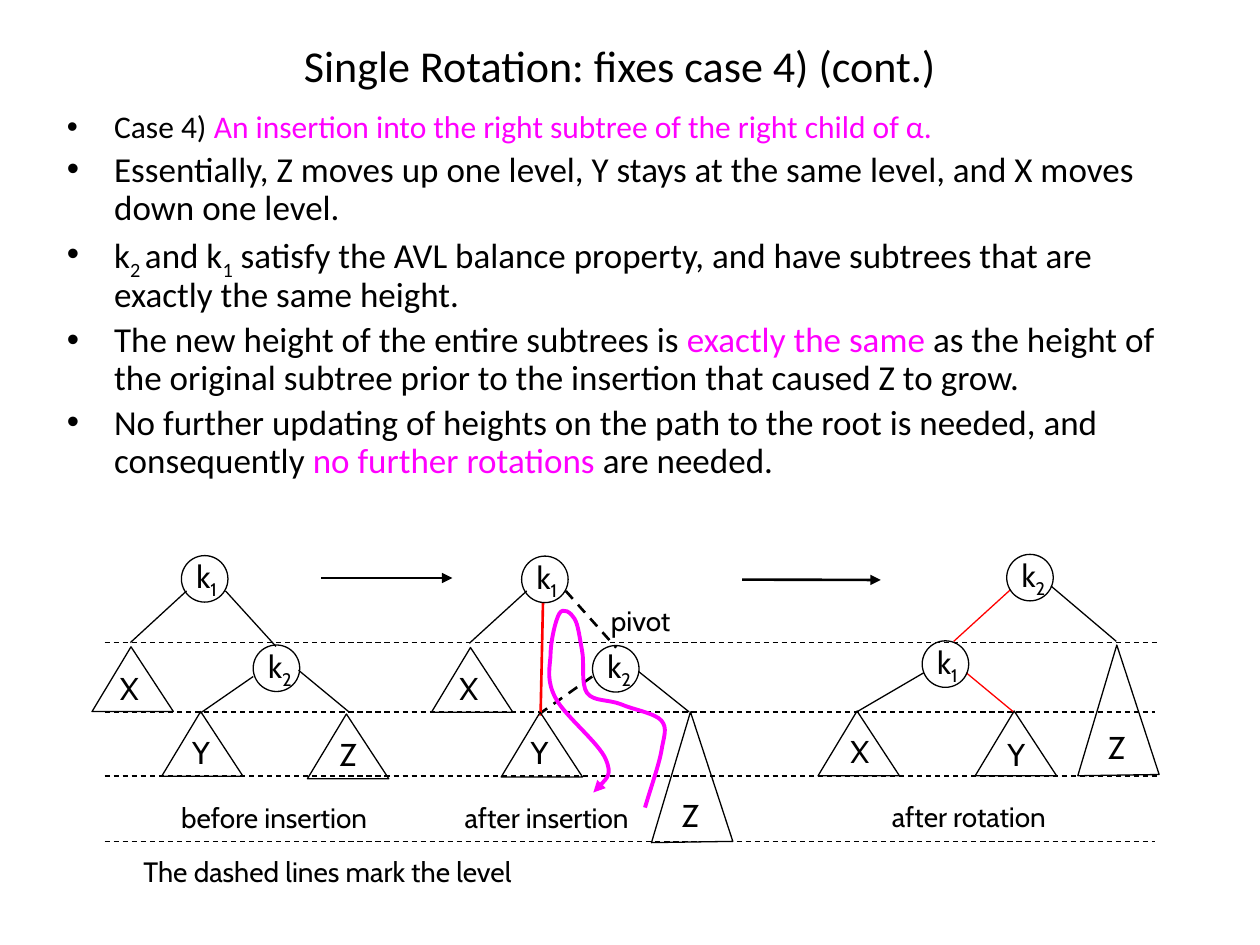
"""Builds a slide on the single rotation that fixes case 4 in an AVL tree."""
from dataclasses import dataclass

from lxml import etree
from pptx import Presentation
from pptx.dml.color import RGBColor
from pptx.enum import dml, shapes, text
from pptx.oxml.ns import qn
from pptx.util import Pt


@dataclass(frozen=True)
class Theme:
    ink: str = "000000"
    accent: str = "FF00FF"
    moved: str = "FF0000"
    body_font: str = "Calibri"
    label_font: str = "Cabin"
    title: float = 25.2
    lead: float = 18
    body: float = 20
    label: float = 18
    caption: float = 16
    thin: float = 0.75
    medium: float = 1.5
    thick: float = 2.25


T = Theme()


@dataclass(frozen=True)
class Run:
    text: str
    color: str = T.ink
    sub: bool = False


@dataclass(frozen=True)
class Node:
    index: str
    x: float
    y: float


@dataclass(frozen=True)
class Subtree:
    name: str
    x: float
    y: float
    label_dx: float = -12
    label_dy: float = 8.5
    tall: bool = False


@dataclass(frozen=True)
class Edge:
    x1: float
    y1: float
    x2: float
    y2: float
    color: str = T.ink
    width: float = T.thin
    dashed: bool = False
    arrow: bool = False


@dataclass(frozen=True)
class Caption:
    text: str
    x: float
    y: float
    w: float


LEVELS = [(367.2, 662.4), (406.8, 660.2), (443.5, 662.4), (481, 660.2)]
NODE_SIZE = 26.6

BULLETS = [
    [Run("Case 4) "),
     Run("An insertion into the right subtree of the right child of α.", T.accent)],
    [Run("Essentially, Z moves up one level, Y stays at the same level, "
         "and X moves down one level.")],
    [Run("k"), Run("2 ", sub=True), Run("and k"), Run("1", sub=True),
     Run(" satisfy the AVL balance property, and have subtrees that are "
         "exactly the same height.")],
    [Run("The new height of the entire subtrees is "), Run("exactly the same", T.accent),
     Run(" as the height of the original subtree prior to the insertion that "
         "caused Z to grow.")],
    [Run("No further updating of heights on the path to the root is needed, "
         "and consequently "), Run("no further rotations", T.accent), Run(" are needed.")],
]
NODES = [
    Node("1", 103.7, 317.5), Node("2", 144.7, 368.6),
    Node("1", 298.1, 317.8), Node("2", 338.6, 368.9),
    Node("2", 575.3, 316.8), Node("1", 527, 366.2),
]
SUBTREES = [
    Subtree("X", 74.9, 369.6, -13.5, 9), Subtree("Y", 114.7, 406.6), Subtree("Z", 198, 408, -11),
    Subtree("X", 268.9, 370, -13.5), Subtree("Y", 308.7, 407, -12.5),
    Subtree("Z", 394.6, 406.8, -12, 44.6, True),
    Subtree("X", 489.8, 406.3, -11), Subtree("Y", 579.6, 406.3, -11, 10),
    Subtree("Z", 638.2, 368.6, -12, 44, True),
]
EDGES = [
    Edge(106.6, 337.7, 74.5, 367.2), Edge(128.9, 337.7, 157.7, 369.4),
    Edge(144.7, 386.6, 114.5, 407.5), Edge(170.6, 383, 199.4, 406.8),
    Edge(301, 337.7, 268.2, 367.6),
    Edge(323.3, 337.7, 352.1, 370.1, width=T.medium, dashed=True),
    Edge(338.4, 386.6, 308.9, 407.5, width=T.medium, dashed=True),
    Edge(365, 383.8, 393.8, 406.8),
    Edge(527.8, 384.5, 488.9, 407.2), Edge(600.5, 334.8, 637.9, 366.5),
    Edge(552.2, 384.5, 579.6, 407.2, T.moved), Edge(577.4, 337, 545, 366.5, T.moved),
    Edge(310.3, 344.2, 308.9, 409, T.moved, T.medium),
    Edge(183.6, 330.3, 258.5, 330.3, width=T.medium, arrow=True),
    Edge(424.1, 331.2, 503.3, 331.4, width=T.medium, arrow=True),
]
CAPTIONS = [
    Caption("The dashed lines mark the level", 74.9, 484.8, 238.3),
    Caption("before insertion", 96.5, 454, 125.3),
    Caption("after insertion", 258.5, 454, 113),
    Caption("after rotation", 502.6, 453.4, 107.3),
    Caption("pivot", 342, 341.6, 49),
]
PIVOT_CURVE = [
    (368.6, 461.5),
    (372.2, 449.3), (376.6, 437), (378, 429.1),
    (379.4, 420.5), (381.6, 416.2), (378, 411.8),
    (374.4, 407.5), (361.4, 405.4), (355, 402.5),
    (347.8, 399.6), (339.1, 401), (335.5, 396),
    (331.9, 391), (334.1, 378.7), (332.6, 371.5),
    (331.2, 364.3), (330.5, 357.1), (328.3, 353.5),
    (326.2, 349.9), (321.8, 347), (319.7, 350.6),
    (317.5, 354.2), (314.6, 366.5), (314.6, 375.1),
    (313.9, 383), (312.5, 389.5), (317.5, 398.9),
    (322.6, 409), (342.7, 424.8), (346.3, 434.2),
    (349.9, 442.8), (344.2, 447.8), (339.1, 452.9),
]


def write(p, txt: str, *, size: float, font: str, color: str = T.ink, sub: bool = False) -> None:
    """Append a formatted run to a paragraph."""
    r = p.add_run()
    r.text = txt
    r.font.size, r.font.name = Pt(size), font
    r.font.color.rgb = RGBColor.from_string(color)
    if sub:
        r.font._element.set("baseline", "-25000")


def place(sp, x: float, y: float, w: float, h: float) -> None:
    """Move and size a shape."""
    sp.left, sp.top, sp.width, sp.height = Pt(x), Pt(y), Pt(w), Pt(h)


def stroke(sp, color: str = T.ink, width: float = T.thin, arrow: bool = False) -> None:
    """Set the line of a shape and its optional arrowhead."""
    sp.line.color.rgb = RGBColor.from_string(color)
    sp.line.width = Pt(width)
    if arrow:
        ln = sp.element.spPr.find(qn("a:ln"))
        etree.SubElement(ln, qn("a:tailEnd"), type="triangle")


def draw_edge(sl, e: Edge) -> None:
    """Draw a straight edge."""
    sp = sl.shapes.add_connector(
        shapes.MSO_CONNECTOR.STRAIGHT, Pt(e.x1), Pt(e.y1), Pt(e.x2), Pt(e.y2))
    sp.line.width = Pt(e.width)
    if e.dashed:
        sp.line.dash_style = dml.MSO_LINE.DASH
    stroke(sp, e.color, e.width, e.arrow)
    etree.SubElement(sp.element.spPr, qn("a:effectLst"))


def draw_label(sl, runs: list[Run], x: float, y: float, w: float, size: float) -> None:
    """Draw an unwrapped text box."""
    tf = sl.shapes.add_textbox(Pt(x), Pt(y), Pt(w), Pt(size + 10.6)).text_frame
    tf.word_wrap = False
    tf.auto_size = text.MSO_AUTO_SIZE.SHAPE_TO_FIT_TEXT
    for run in runs:
        write(tf.paragraphs[0], run.text, size=size, font=T.label_font, color=run.color, sub=run.sub)


def draw_outline(sl, points: list[tuple[float, float]], close: bool):
    """Draw an unfilled outline through the points."""
    start, *rest = [(Pt(x), Pt(y)) for x, y in points]
    fb = sl.shapes.build_freeform(*start)
    fb.add_line_segments(rest, close=close)
    sp = fb.convert_to_shape()
    sp.fill.background()
    sp.shadow.inherit = False
    return sp


def draw_node(sl, n: Node) -> None:
    """Draw a tree node with its subscripted label."""
    sp = sl.shapes.add_shape(
        shapes.MSO_SHAPE.OVAL, Pt(n.x), Pt(n.y), Pt(NODE_SIZE), Pt(NODE_SIZE))
    sp.fill.background()
    sp.shadow.inherit = False
    stroke(sp)
    draw_label(sl, [Run("k"), Run(n.index, sub=True)], n.x + 1.4, n.y - 2.5, 30.2, T.label)


def draw_subtree(sl, s: Subtree) -> None:
    """Draw a subtree triangle hanging from its apex."""
    h, lift = (74.7, 0.7) if s.tall else (37, 0)
    stroke(draw_outline(sl, [(s.x, s.y), (s.x - 22.3, s.y + h), (s.x + 24.2, s.y + h - lift)], True))
    draw_label(sl, [Run(s.name)], s.x + s.label_dx, s.y + s.label_dy, 25, T.label)


def draw_curve(sl, points: list[tuple[float, float]]) -> None:
    """Draw a Bezier arrow from a start and triples of control points."""
    sp = draw_outline(sl, points, False)
    segments = list(sp.element.iter(qn("a:lnTo")))
    for i in range(0, len(segments), 3):
        bezier = etree.SubElement(segments[i].getparent(), qn("a:cubicBezTo"))
        for seg in segments[i:i + 3]:
            bezier.append(seg[0])
            seg.getparent().remove(seg)
    stroke(sp, T.accent, T.thick, arrow=True)


def fill_text(sl) -> None:
    """Fill the title and body placeholders."""
    title, body = sl.shapes.title, sl.placeholders[1]
    place(title, 48.2, 23.8, 612, 26.6)
    place(body, 31, 59.8, 659.5, 258.5)
    for sp in (title, body):
        sp.text_frame.auto_size = text.MSO_AUTO_SIZE.NONE
    title.text_frame.vertical_anchor = text.MSO_ANCHOR.MIDDLE
    p = title.text_frame.paragraphs[0]
    p.alignment = text.PP_ALIGN.CENTER
    write(p, "Single Rotation: fixes case 4) (cont.)", size=T.title, font=T.body_font)
    tf = body.text_frame
    for i, runs in enumerate(BULLETS):
        p = tf.add_paragraph() if i else tf.paragraphs[0]
        p.line_spacing = 0.9
        for run in runs:
            write(p, run.text, size=T.body if i else T.lead, font=T.body_font,
                  color=run.color, sub=run.sub)


def main() -> None:
    """Build and save the slide."""
    prs = Presentation()
    prs.slide_width, prs.slide_height = Pt(720), Pt(540)
    sl = prs.slides.add_slide(prs.slide_layouts[1])
    fill_text(sl)
    for y, right in LEVELS:
        draw_edge(sl, Edge(59.8, y, right, y, dashed=True))
    for e in EDGES:
        draw_edge(sl, e)
    for n in NODES:
        draw_node(sl, n)
    for s in SUBTREES:
        draw_subtree(sl, s)
    draw_curve(sl, PIVOT_CURVE)
    for c in CAPTIONS:
        draw_label(sl, [Run(c.text)], c.x, c.y, c.w, T.caption)
    prs.save("out.pptx")


if __name__ == "__main__":
    main()
